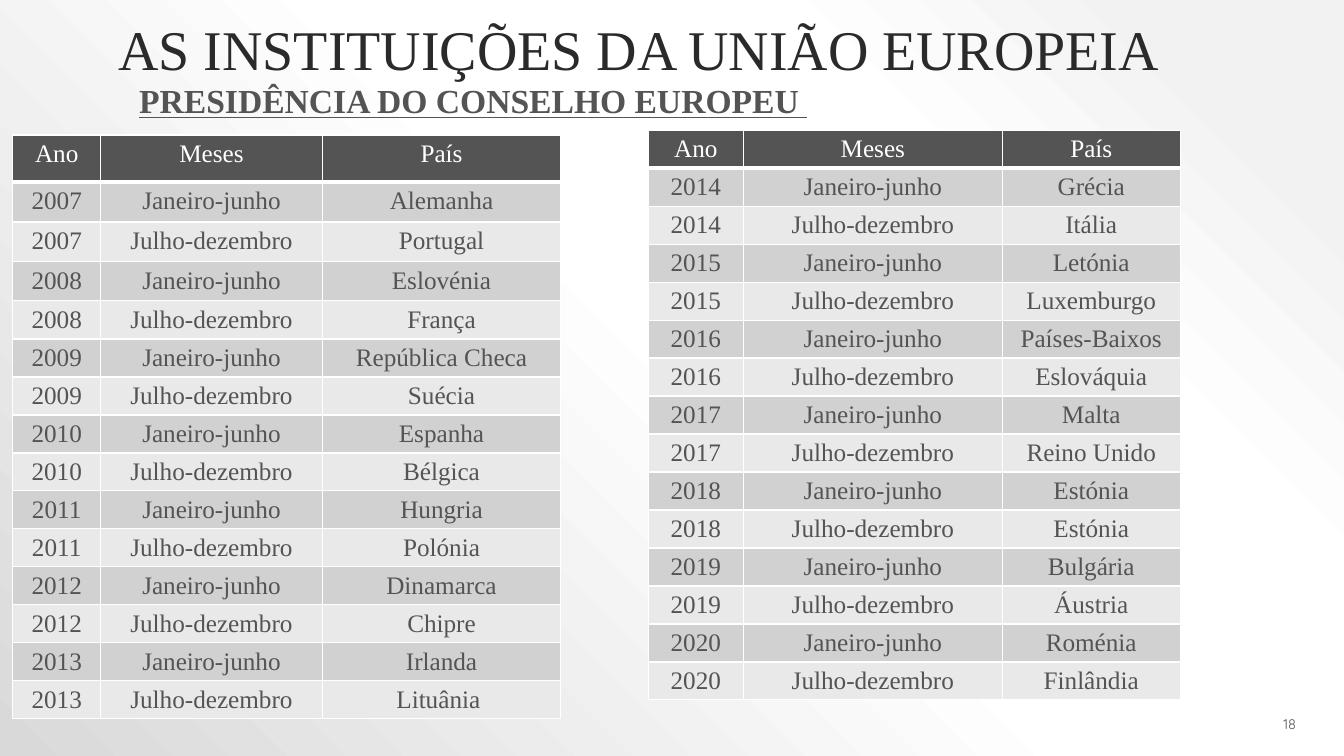
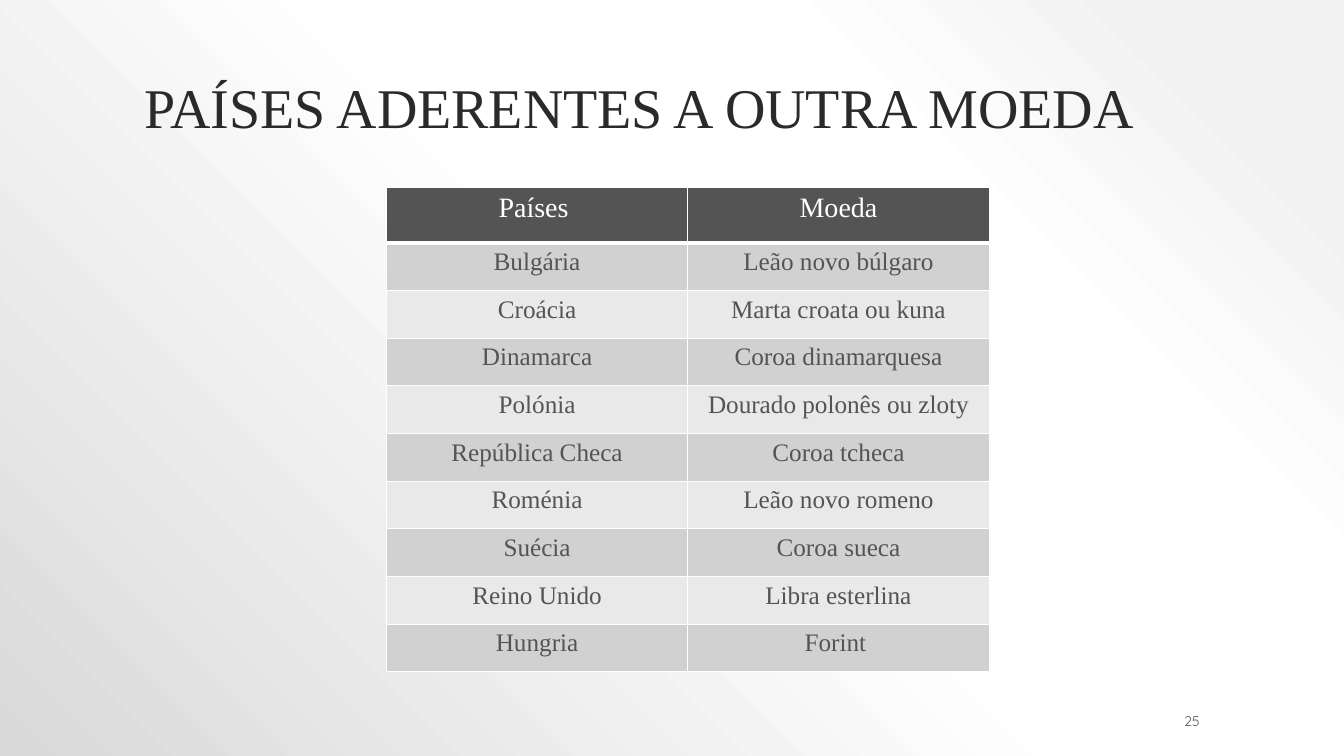
from lxml import etree
from pptx import Presentation
from pptx.dml.color import RGBColor
from pptx.enum import text
from pptx.oxml import ns
from pptx.util import Pt

# Shared look
WIDTH, HEIGHT = 960, 540
SERIF, SANS = "Times New Roman", "Quicksand"
TITLE, DARK, WHITE = "2A2A2A", "545454", "FFFFFF"
ROW_FILLS = ("D1D1D1", "E9E9E9")
BACKDROP = ((10, "F2F2F2"), (28, WHITE), (48, WHITE), (100, "D9D9D9"))
ROW_HEIGHT = 27.15

# Content
COUNCIL_HEADER = ("Ano", "Meses", "País")
SEMESTERS = ("Janeiro-junho", "Julho-dezembro")
FROM_2007 = (
    "Alemanha", "Portugal", "Eslovénia", "França", "República Checa",
    "Suécia", "Espanha", "Bélgica", "Hungria", "Polónia", "Dinamarca",
    "Chipre", "Irlanda", "Lituânia ",
)
FROM_2014 = (
    "Grécia", "Itália", "Letónia", "Luxemburgo", "Países-Baixos",
    "Eslováquia", "Malta", "Reino Unido", "Estónia", "Estónia", "Bulgária",
    "Áustria", "Roménia", "Finlândia",
)
CURRENCIES = (
    ("Países ", "Moeda"),
    ("Bulgária", "Leão novo búlgaro"),
    ("Croácia", "Marta croata ou kuna"),
    ("Dinamarca", "Coroa dinamarquesa"),
    ("Polónia", "Dourado polonês ou zloty"),
    ("República Checa", "Coroa tcheca"),
    ("Roménia", "Leão novo romeno"),
    ("Suécia", "Coroa sueca"),
    ("Reino Unido", "Libra esterlina"),
    ("Hungria", "Forint "),
)


def color(value):
    return RGBColor.from_string(value)


def add_xml(parent, tag, **attributes):
    return etree.SubElement(parent, ns.qn(tag), attributes)


def write(frame, words, size, ink, font=SERIF, align=None, bold=False, underline=False):
    frame.text = words
    para = frame.paragraphs[0]
    para.alignment = align
    for span in para.runs:
        span.font.name = font
        span.font.size = Pt(size)
        span.font.bold = bold
        span.font.underline = underline
        span.font.color.rgb = color(ink)
    return para


def paint_backdrop(master):
    """Radial gradient centred on the top right corner."""
    master.background.fill.gradient()
    gradient = next(master.element.iter(ns.qn("a:gradFill")))
    for child in list(gradient):
        gradient.remove(child)
    stops = add_xml(gradient, "a:gsLst")
    for position, value in BACKDROP:
        stop = add_xml(stops, "a:gs", pos=str(position * 1000))
        add_xml(stop, "a:srgbClr", val=value)
    circle = add_xml(gradient, "a:path", path="circle")
    add_xml(circle, "a:fillToRect", l="100000", b="100000")


def place(shape, left, top, width, height):
    shape.left, shape.top = Pt(left), Pt(top)
    shape.width, shape.height = Pt(width), Pt(height)


def add_page(deck, title, title_box, number, number_box):
    page = deck.slides.add_slide(deck.slide_layouts.get_by_name("Title Only"))
    heading = page.shapes.title
    place(heading, *title_box)
    frame = heading.text_frame
    frame.vertical_anchor = text.MSO_ANCHOR.BOTTOM
    frame.auto_size = text.MSO_AUTO_SIZE.NONE
    write(frame, title, 40, TITLE, align=text.PP_ALIGN.LEFT).line_spacing = 0.9
    add_text(page, number_box, str(number), 10, font=SANS,
             align=text.PP_ALIGN.RIGHT, anchor=text.MSO_ANCHOR.MIDDLE)
    return page


def add_text(page, area, words, size, anchor=text.MSO_ANCHOR.TOP, **style):
    box = page.shapes.add_textbox(*map(Pt, area))
    box.text_frame.word_wrap = True
    box.text_frame.vertical_anchor = anchor
    return write(box.text_frame, words, size, DARK, **style)


def add_borders(cell, top, bottom):
    properties = cell._tc.get_or_add_tcPr()
    sides = (("L", 1), ("R", 1), ("T", top), ("B", bottom))
    for index, (side, weight) in enumerate(sides):
        line = add_xml(properties, f"a:ln{side}", w=str(Pt(weight)))
        add_xml(add_xml(line, "a:solidFill"), "a:srgbClr", val=WHITE)
        properties.insert(index, line)


def add_grid(page, left, top, widths, heights, rows, header_size=18):
    frame = page.shapes.add_table(len(rows), len(widths), Pt(left), Pt(top),
                                  Pt(sum(widths)), Pt(sum(heights)))
    table = frame.table
    table.horz_banding = False
    for column, width in zip(table.columns, widths):
        column.width = Pt(width)
    for index, (row, height, values) in enumerate(zip(table.rows, heights, rows)):
        row.height = Pt(height)
        is_header = index == 0
        fill = DARK if is_header else ROW_FILLS[(index - 1) % 2]
        for cell, value in zip(row.cells, values):
            cell.margin_bottom = Pt(1.5)
            cell.fill.solid()
            cell.fill.fore_color.rgb = color(fill)
            add_borders(cell, 3 if index == 1 else 1, 3 if is_header else 1)
            write(cell.text_frame, value, header_size if is_header else 18,
                  WHITE if is_header else DARK, align=text.PP_ALIGN.CENTER)


def presidencies(first_year, countries):
    """Two countries a year, one for each semester."""
    return [COUNCIL_HEADER] + [
        (str(first_year + index // 2), SEMESTERS[index % 2], country)
        for index, country in enumerate(countries)
    ]


def main():
    deck = Presentation()
    deck.slide_width, deck.slide_height = Pt(WIDTH), Pt(HEIGHT)
    paint_backdrop(deck.slide_master)

    # Council presidencies
    page = add_page(deck, "AS INSTITUIÇÕES DA UNIÃO EUROPEIA", (77.3, -42, 798, 104.5),
                    18, (905.3, 508, 27.5, 17.5))
    add_grid(page, 9.2, 96.5, (62.6, 158.6, 170),
             [33.3, 28.8, 28.3, 27.9, 27.4] + [ROW_HEIGHT] * 10,
             presidencies(2007, FROM_2007))
    add_grid(page, 463, 93, (68, 185, 127), [ROW_HEIGHT] * 15,
             presidencies(2014, FROM_2014))
    subtitle = add_text(page, (92.3, 57, 813, 33), "PRESIDÊNCIA DO CONSELHO EUROPEU ",
                        24, bold=True, underline=True)
    subtitle.line_spacing = 0.9

    # Other currencies
    page = add_page(deck, "PAÍSES ADERENTES A OUTRA MOEDA", (96, 0, 768, 104),
                    25, (774, 507.5, 90, 14.5))
    add_grid(page, 276, 134, (215.3, 215.3), [39.5] + [34.05] * 9, CURRENCIES, 20)

    deck.save("out.pptx")


if __name__ == "__main__":
    main()
